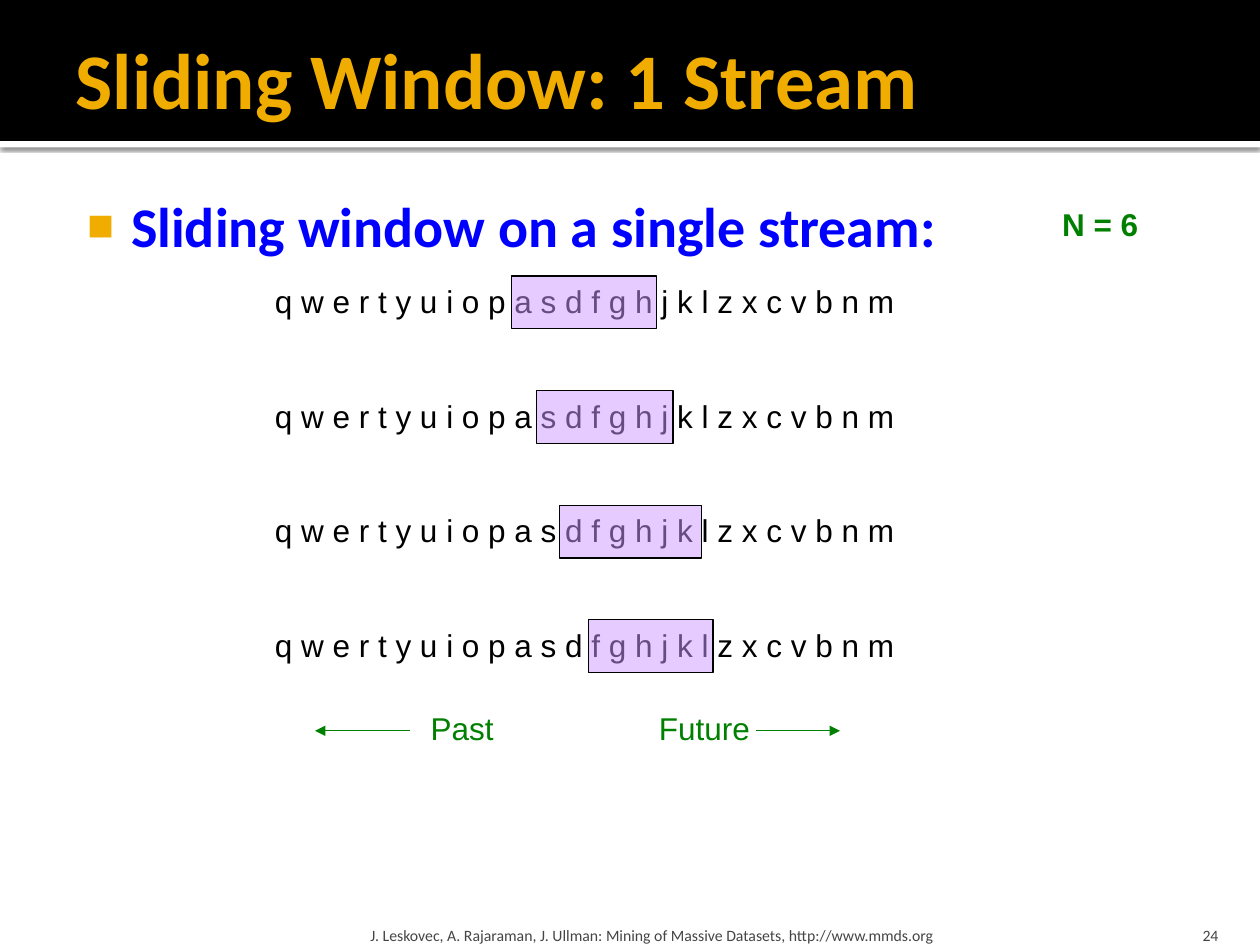
from dataclasses import dataclass

from lxml import etree
from pptx import Presentation
from pptx.dml.color import RGBColor
from pptx.enum.shapes import MSO_CONNECTOR, MSO_SHAPE
from pptx.enum.text import MSO_ANCHOR, MSO_AUTO_SIZE, PP_ALIGN
from pptx.oxml import parse_xml
from pptx.oxml.ns import nsdecls, qn
from pptx.util import Pt

RECTANGLE = MSO_SHAPE.RECTANGLE
STRAIGHT = MSO_CONNECTOR.STRAIGHT
TOP, MIDDLE, BOTTOM = MSO_ANCHOR.TOP, MSO_ANCHOR.MIDDLE, MSO_ANCHOR.BOTTOM
LEFT, RIGHT = PP_ALIGN.LEFT, PP_ALIGN.RIGHT
NO_AUTOFIT = MSO_AUTO_SIZE.NONE


@dataclass(frozen=True)
class Theme:
    heading_font: str = "Calibri"
    label_font: str = "Arial"
    black: str = "000000"
    white: str = "FFFFFF"
    gold: str = "F0AD00"
    blue: str = "0000FF"
    green: str = "008000"
    gray: str = "454545"
    lilac: str = "CC99FF"
    title_size: float = 45
    list_size: float = 32
    label_size: float = 18
    footer_size: float = 9
    line_width: float = 0.75


THEME = Theme()
STREAM = "q w e r t y u i o p a s d f g h j k l z x c v b n m"
STREAM_BOX = (150, 157.7, 384.5, 28.8)
ROW_STEP = 65.5
WINDOW_HEIGHT = 30.2
# Offset from the start of the stream, and width, of each successive window
WINDOWS = [(142.3, 82.8), (156.7, 77.8), (169.7, 81.4), (186.2, 71.3)]


def color(code):
    return RGBColor.from_string(code)


def place(shape, box):
    shape.left, shape.top, shape.width, shape.height = map(Pt, box)


def write(shape, text, size, font, code, bold=False, align=LEFT,
          anchor=TOP, insets=(7.2, 3.6, 7.2, 3.6), wrap=True):
    """Set the text of a shape, then format its frame, paragraph and run."""
    frame = shape.text_frame
    frame.text = text
    frame.word_wrap = wrap
    frame.auto_size = NO_AUTOFIT
    frame.vertical_anchor = anchor
    (frame.margin_left, frame.margin_top,
     frame.margin_right, frame.margin_bottom) = map(Pt, insets)
    paragraph = frame.paragraphs[0]
    paragraph.alignment = align
    style = paragraph.runs[0].font
    style.size, style.name, style.bold = Pt(size), font, bold
    style.color.rgb = color(code)
    return paragraph


def add_label(shapes, box, text, code, bold=False):
    label = shapes.add_textbox(*map(Pt, box))
    write(label, text, THEME.label_size, THEME.label_font, code, bold, wrap=False)


def add_rectangle(shapes, box, code):
    rectangle = shapes.add_shape(RECTANGLE, *map(Pt, box))
    rectangle.shadow.inherit = False
    rectangle.fill.solid()
    rectangle.fill.fore_color.rgb = color(code)
    rectangle.line.fill.background()
    return rectangle


def add_header(slide, box):
    """Black band above a white strip with a shadow, and the title on top."""
    left, top, width, height = box
    title = slide.shapes.title
    strip = add_rectangle(slide.shapes, (left, top + height, width, 3.6), THEME.white)
    band = add_rectangle(slide.shapes, box, THEME.black)
    effects = strip.element.spPr.find(qn("a:effectLst"))
    effects.append(parse_xml(
        f'<a:outerShdw {nsdecls("a")} blurRad="{Pt(2.5)}" dist="{Pt(0.8)}" '
        f'dir="5400000" algn="t" rotWithShape="0"><a:srgbClr val="{THEME.black}">'
        '<a:alpha val="60000"/></a:srgbClr></a:outerShdw>'))
    for backdrop in (strip, band):
        title.element.addprevious(backdrop.element)
    place(title, (left + 36, top + 5.8, width - 72, 77.8))
    write(title, "Sliding Window: 1 Stream", THEME.title_size, THEME.heading_font,
          THEME.gold, bold=True, anchor=MIDDLE, insets=(7.2, 3.6, 3.6, 3.6))


def add_topic(slide, box):
    topic = slide.placeholders[1]
    place(topic, box)
    paragraph = write(topic, "Sliding window on a single stream:", THEME.list_size,
                      THEME.heading_font, THEME.blue, bold=True,
                      insets=(4.3, 7.2, 7.2, 3.6))
    paragraph.space_before = Pt(0)
    properties = paragraph._p.get_or_add_pPr()
    properties.set("marL", str(Pt(34.6)))
    properties.set("indent", str(Pt(-25.2)))
    bullet_color = etree.SubElement(properties, qn("a:buClr"))
    etree.SubElement(bullet_color, qn("a:srgbClr"), val=THEME.gold)
    etree.SubElement(properties, qn("a:buSzPct"), val="80000")
    etree.SubElement(properties, qn("a:buFont"), typeface=THEME.label_font)
    etree.SubElement(properties, qn("a:buChar"), char="■")


def add_stream(slide, box, offset, window_width):
    """One row of the stream, with the current window laid over it."""
    left, top = box[:2]
    row = slide.shapes.add_group_shape()
    add_label(row.shapes, box, STREAM, THEME.black)
    window = add_rectangle(
        row.shapes, (left + offset, top, window_width, WINDOW_HEIGHT), THEME.lilac)
    window.line.color.rgb = color(THEME.black)
    window.line.width = Pt(THEME.line_width)
    fill = window.element.spPr.find(qn("a:solidFill"))
    etree.SubElement(fill[0], qn("a:alpha"), val="50000")


def add_arrow(slide, start, end, y):
    arrow = slide.shapes.add_connector(STRAIGHT, Pt(start), Pt(y), Pt(end), Pt(y))
    arrow.line.color.rgb = color(THEME.green)
    arrow.line.width = Pt(THEME.line_width)
    etree.SubElement(arrow.line._get_or_add_ln(), qn("a:tailEnd"), type="triangle")
    etree.SubElement(arrow.element.spPr, qn("a:effectLst"))


def add_time_axis(slide, box):
    left, top, width, height = box
    arrow_y = top + 15.8
    add_label(slide.shapes, (left + 59, top, 50.4, height), "Past", THEME.green)
    add_label(slide.shapes, (left + 189.5, top, 66, height), "Future", THEME.green)
    add_arrow(slide, left + 54, left, arrow_y)
    add_arrow(slide, left + 252, left + width, arrow_y)


def add_footer(slide, box):
    left, top, width, height = box
    number_width = 57.6
    credit_width = width - number_width
    credit = slide.shapes.add_textbox(*map(Pt, (left, top, credit_width, height)))
    write(credit, "J. Leskovec, A. Rajaraman, J. Ullman: Mining of Massive Datasets, "
          "http://www.mmds.org", THEME.footer_size, THEME.heading_font, THEME.gray,
          anchor=BOTTOM, insets=(3.6, 3.6, 3.6, 0))
    number = slide.shapes.add_textbox(
        *map(Pt, (left + credit_width, top, number_width, height)))
    write(number, "24", THEME.footer_size, THEME.heading_font, THEME.gray,
          align=RIGHT, anchor=BOTTOM, insets=(7.2, 3.6, 7.2, 0))


def main():
    deck = Presentation()
    deck.slide_width, deck.slide_height = Pt(720), Pt(540)
    slide = deck.slides.add_slide(deck.slide_layouts[1])
    add_header(slide, (0, 0, 720, 80.6))
    add_topic(slide, (36, 102.2, 648, 414))
    add_footer(slide, (208, 518.4, 495.4, 21.6))
    left, top, width, height = STREAM_BOX
    for row, (offset, window_width) in enumerate(WINDOWS):
        add_stream(slide, (left, top + row * ROW_STEP, width, height),
                   offset, window_width)
    add_time_axis(slide, (180, 401.8, 300, 28.8))
    add_label(slide.shapes, (599.8, 113.8, 58.3, 28.8), "N = 6", THEME.green, bold=True)
    deck.save("out.pptx")


if __name__ == "__main__":
    main()
